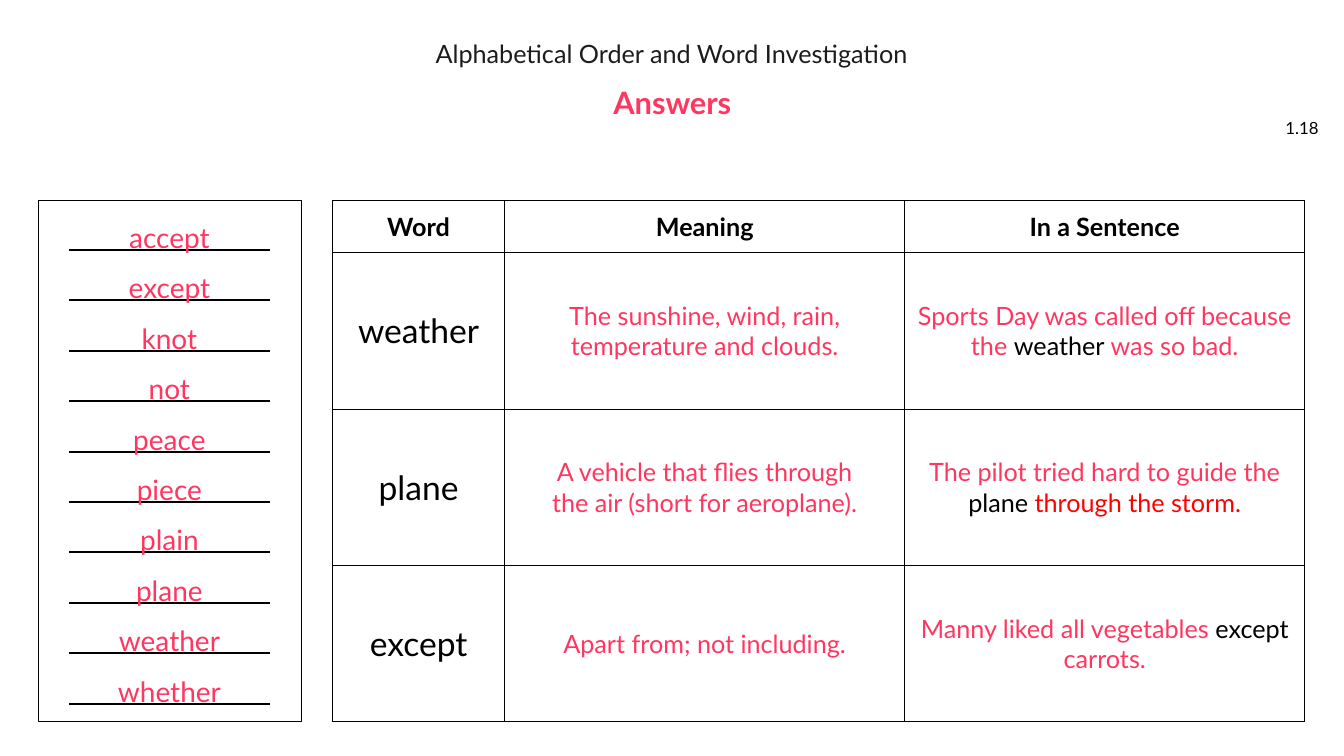
from dataclasses import dataclass

import pptx
import pptx.dml.color
import pptx.enum.shapes
import pptx.enum.text
import pptx.oxml
import pptx.oxml.ns
import pptx.util

Cm = pptx.util.Cm
Pt = pptx.util.Pt
ALIGN = pptx.enum.text.PP_ALIGN
MIDDLE = pptx.enum.text.MSO_ANCHOR.MIDDLE

FONT = "Lato"
COLORS = {"ink": "000000", "title": "1D1C1D", "answer": "FF3760", "red": "FF0000"}


@dataclass(frozen=True)
class Span:
    text: str
    color: str = "answer"
    size: float = 18
    bold: bool = False


@dataclass(frozen=True)
class Label:
    span: Span
    left: float
    top: float
    width: float
    height: float
    align: ALIGN = ALIGN.CENTER
    spacing: float | pptx.util.Length | None = None


@dataclass(frozen=True)
class Entry:
    word: str
    meaning: list[str]
    sentence: list[Span]


WORDS = ["accept", "except", "knot", "not", "peace",
         "piece", "plain", "plane", "weather", "whether"]
WORD_PITCH = 1.27
FIRST_WORD_TOP = 5.33
FIRST_RULE_TOP = 6.3
RULE_LEFT, RULE_RIGHT = 1.75, 6.81

PANEL_TOP = 5.05
COLUMN_WIDTHS = [4.34, 10.08, 10.08]
HEADER_HEIGHT, ENTRY_HEIGHT = 1.32, 3.94

HEADINGS = ["Word", "Meaning", "In a Sentence"]
ENTRIES = [
    Entry("weather", ["The sunshine, wind, rain, temperature and clouds."],
          [Span("Sports Day was called off because the "),
           Span("weather ", "ink"), Span("was so bad.")]),
    Entry("plane", ["A vehicle that flies through", "the air (short for aeroplane)."],
          [Span("The pilot tried hard to guide the "),
           Span("plane", "ink"), Span(" through the storm.", "red")]),
    Entry("except", ["Apart from; not including."],
          [Span("Manny liked all vegetables "),
           Span("except", "ink"), Span(" carrots.")]),
]

LABELS = [
    Label(Span("Alphabetical Order and Word Investigation", "title"),
          9.7, 0.94, 14.45, 0.89, spacing=0.9),
    Label(Span("Answers", size=22, bold=True), 5.31, 2.13, 23.27, 1.02, spacing=0.9),
    Label(Span("1.18", "ink", 12), 31.88, 2.72, 1.6, 1.02, ALIGN.RIGHT),
]


def rgb(name: str) -> pptx.dml.color.RGBColor:
    return pptx.dml.color.RGBColor.from_string(COLORS[name])


def add_text(para, text: str, *, color: str, size: float, bold: bool = False) -> None:
    run = para.add_run()
    run.text = text
    run.font.name = FONT
    run.font.size = Pt(size)
    run.font.bold = bold
    run.font.color.rgb = rgb(color)


def add_span(para, span: Span) -> None:
    add_text(para, span.text, color=span.color, size=span.size, bold=span.bold)


def add_label(page, label: Label) -> None:
    box = page.shapes.add_textbox(
        Cm(label.left), Cm(label.top), Cm(label.width), Cm(label.height))
    frame = box.text_frame
    frame.word_wrap = True
    frame.vertical_anchor = MIDDLE
    para = frame.paragraphs[0]
    para.alignment = label.align
    para.line_spacing = label.spacing
    add_span(para, label.span)


def add_rule(page, top: float) -> None:
    rule = page.shapes.add_connector(
        pptx.enum.shapes.MSO_CONNECTOR.STRAIGHT,
        Cm(RULE_LEFT), Cm(top), Cm(RULE_RIGHT), Cm(top))
    rule.line.color.rgb = rgb("ink")
    rule.line.width = Pt(1.5)
    properties = rule._element.spPr
    properties.append(pptx.oxml.parse_xml(
        f"<a:effectLst {pptx.oxml.ns.nsdecls('a')}/>"))


def add_word_list(page) -> None:
    for index in range(len(WORDS)):
        add_rule(page, FIRST_RULE_TOP + index * WORD_PITCH)
    for index, word in enumerate(WORDS):
        top = FIRST_WORD_TOP + index * WORD_PITCH
        add_label(page, Label(Span(word, size=20), 0.08, top, 8.38, 1.19,
                              spacing=Pt(27)))
    outline = page.shapes.add_shape(
        pptx.enum.shapes.MSO_SHAPE.RECTANGLE,
        Cm(0.97), Cm(PANEL_TOP), Cm(6.63), Cm(13.13))
    outline.shadow.inherit = False
    outline.fill.background()
    outline.line.color.rgb = rgb("ink")
    outline.line.width = Pt(1)


def add_borders(cell) -> None:
    properties = cell._tc.get_or_add_tcPr()
    for side in ("lnL", "lnR", "lnT", "lnB"):
        properties.append(pptx.oxml.parse_xml(
            f'<a:{side} {pptx.oxml.ns.nsdecls("a")} w="{Pt(0.75)}"><a:solidFill>'
            f'<a:srgbClr val="{COLORS["ink"]}"/></a:solidFill></a:{side}>'))


def fill_cell(cell, lines: list[list[Span]]) -> None:
    """Write each list of spans as one centred paragraph."""
    add_borders(cell)
    cell.fill.background()
    cell.vertical_anchor = MIDDLE
    for index, spans in enumerate(lines):
        frame = cell.text_frame
        para = frame.add_paragraph() if index else frame.paragraphs[0]
        para.alignment = ALIGN.CENTER
        for span in spans:
            add_span(para, span)


def add_word_table(page) -> None:
    heights = [HEADER_HEIGHT] + [ENTRY_HEIGHT] * len(ENTRIES)
    table = page.shapes.add_table(
        len(heights), len(COLUMN_WIDTHS), Cm(8.38), Cm(PANEL_TOP),
        Cm(sum(COLUMN_WIDTHS)), Cm(sum(heights))).table
    table.first_row = False
    table.horz_banding = False
    for column, width in zip(table.columns, COLUMN_WIDTHS):
        column.width = Cm(width)
    for row, height in zip(table.rows, heights):
        row.height = Cm(height)

    contents = [[[[Span(heading, "ink", bold=True)]] for heading in HEADINGS]]
    for entry in ENTRIES:
        contents.append([[[Span(entry.word, "ink", 24)]],
                         [[Span(line)] for line in entry.meaning],
                         [entry.sentence]])
    for row, row_contents in zip(table.rows, contents):
        for cell, lines in zip(row.cells, row_contents):
            fill_cell(cell, lines)


def main() -> None:
    deck = pptx.Presentation()
    deck.slide_width, deck.slide_height = Cm(33.87), Cm(19.05)
    page = deck.slides.add_slide(deck.slide_layouts[6])
    add_word_list(page)
    add_word_table(page)
    for label in LABELS:
        add_label(page, label)
    deck.save("out.pptx")


if __name__ == "__main__":
    main()
